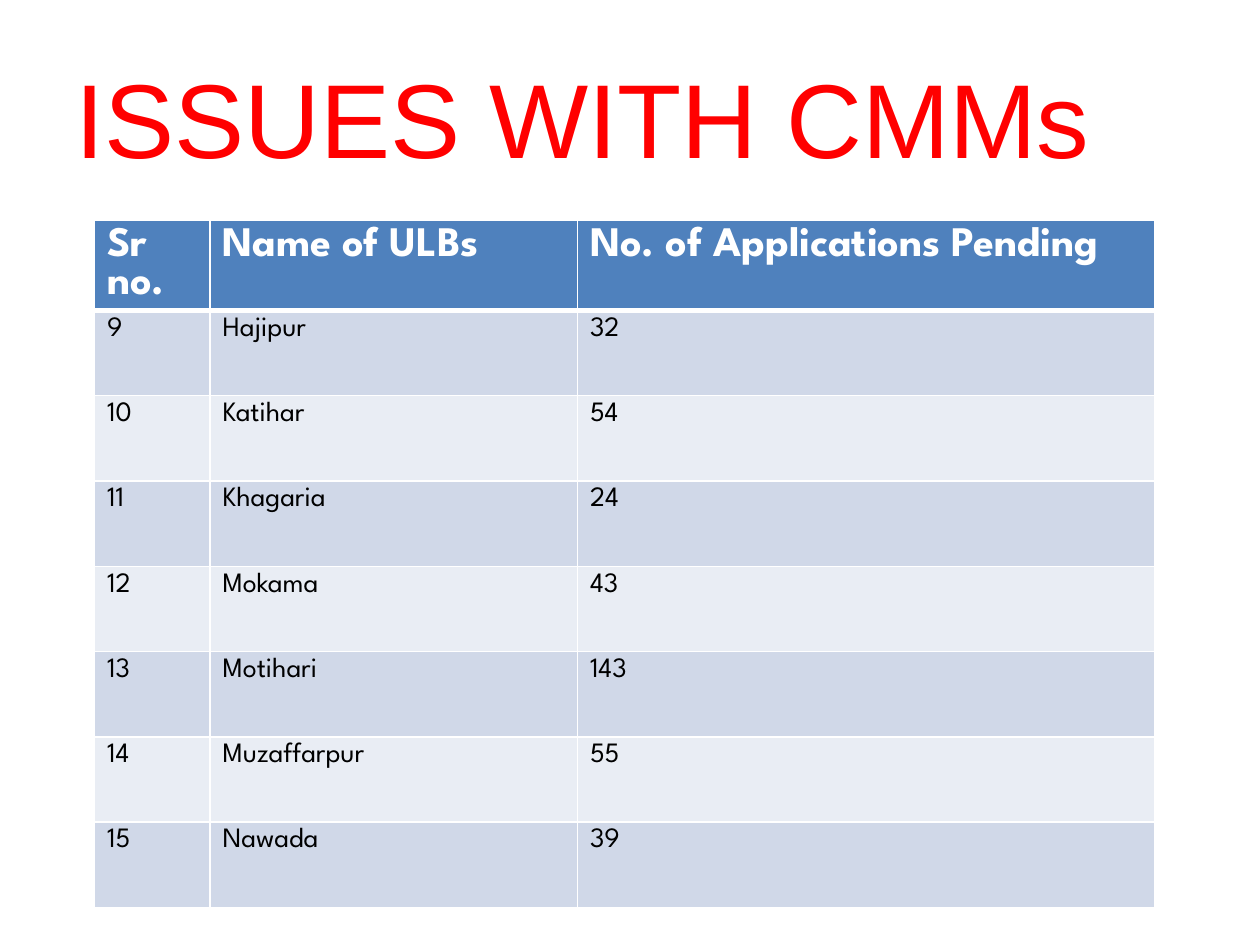
from dataclasses import dataclass
from typing import NamedTuple

from lxml.etree import SubElement
from pptx import Presentation
from pptx.dml.color import RGBColor as Rgb
from pptx.enum.text import MSO_ANCHOR as Anchor, PP_ALIGN as Align
from pptx.oxml.ns import qn
from pptx.util import Pt


@dataclass(frozen=True)
class Theme:
    title_font: str = "Arial"
    table_font: str = "League Spartan"
    title_size: float = 60
    header_size: float = 24
    body_size: float = 16
    title: str = "FF0000"
    header: str = "4F81BD"
    bands: tuple[str, str] = ("D0D8E8", "E9EDF4")
    light: str = "FFFFFF"
    dark: str = "000000"
    thin: float = 1
    thick: float = 3


class Ulb(NamedTuple):
    number: int
    name: str
    pending: int


THEME = Theme()
HEADINGS = ("Sr no.", "Name of ULBs", "No. of Applications Pending")
ULBS = (
    Ulb(9, "Hajipur", 32),
    Ulb(10, "Katihar", 54),
    Ulb(11, "Khagaria", 24),
    Ulb(12, "Mokama", 43),
    Ulb(13, "Motihari", 143),
    Ulb(14, "Muzaffarpur", 55),
    Ulb(15, "Nawada", 39),
)
COLUMN_WIDTHS = (66, 210, 330)
ROW_HEIGHT = 48.75


def style_font(font, name: str, size: float, colour: str, bold: bool = False) -> None:
    font.name, font.size, font.bold = name, Pt(size), bold
    font.color.rgb = Rgb.from_string(colour)


def add_title(page, text: str) -> None:
    box = page.shapes.add_textbox(Pt(36), Pt(21.6), Pt(648), Pt(90))
    frame = box.text_frame
    frame.word_wrap = True
    frame.vertical_anchor = Anchor.MIDDLE
    para = frame.paragraphs[0]
    para.text = text
    para.alignment = Align.LEFT
    style_font(para.font, THEME.title_font, THEME.title_size, THEME.title)


def set_borders(cell, top: float, bottom: float) -> None:
    """Draw all four edges; call before filling, as the schema puts lines first."""
    properties = cell._tc.get_or_add_tcPr()
    edges = {"lnL": THEME.thin, "lnR": THEME.thin, "lnT": top, "lnB": bottom}
    for tag, width in edges.items():
        line = SubElement(properties, qn(f"a:{tag}"), w=str(Pt(width)))
        fill = SubElement(line, qn("a:solidFill"))
        SubElement(fill, qn("a:srgbClr"), val=THEME.light)


def fill_cell(cell, text: str, row: int) -> None:
    is_header = row == 0
    set_borders(
        cell,
        top=THEME.thick if row == 1 else THEME.thin,
        bottom=THEME.thick if is_header else THEME.thin,
    )
    cell.fill.solid()
    colour = THEME.header if is_header else THEME.bands[(row - 1) % 2]
    cell.fill.fore_color.rgb = Rgb.from_string(colour)
    para = cell.text_frame.paragraphs[0]
    para.text = text
    style_font(
        para.font,
        THEME.table_font,
        THEME.header_size if is_header else THEME.body_size,
        THEME.light if is_header else THEME.dark,
        bold=is_header,
    )


def add_ulb_table(page) -> None:
    rows = (HEADINGS, *ULBS)
    table = page.shapes.add_table(
        len(rows), len(HEADINGS), Pt(54), Pt(126),
        Pt(sum(COLUMN_WIDTHS)), Pt(ROW_HEIGHT * len(rows)),
    ).table
    for column, width in zip(table.columns, COLUMN_WIDTHS):
        column.width = Pt(width)
    for row, values in enumerate(rows):
        table.rows[row].height = Pt(ROW_HEIGHT)
        for column, value in enumerate(values):
            fill_cell(table.cell(row, column), str(value), row)


def main() -> None:
    deck = Presentation()
    deck.slide_width, deck.slide_height = Pt(720), Pt(540)
    page = deck.slides.add_slide(deck.slide_layouts[6])
    add_ulb_table(page)
    add_title(page, "ISSUES WITH CMMs")
    deck.save("out.pptx")


if __name__ == "__main__":
    main()
